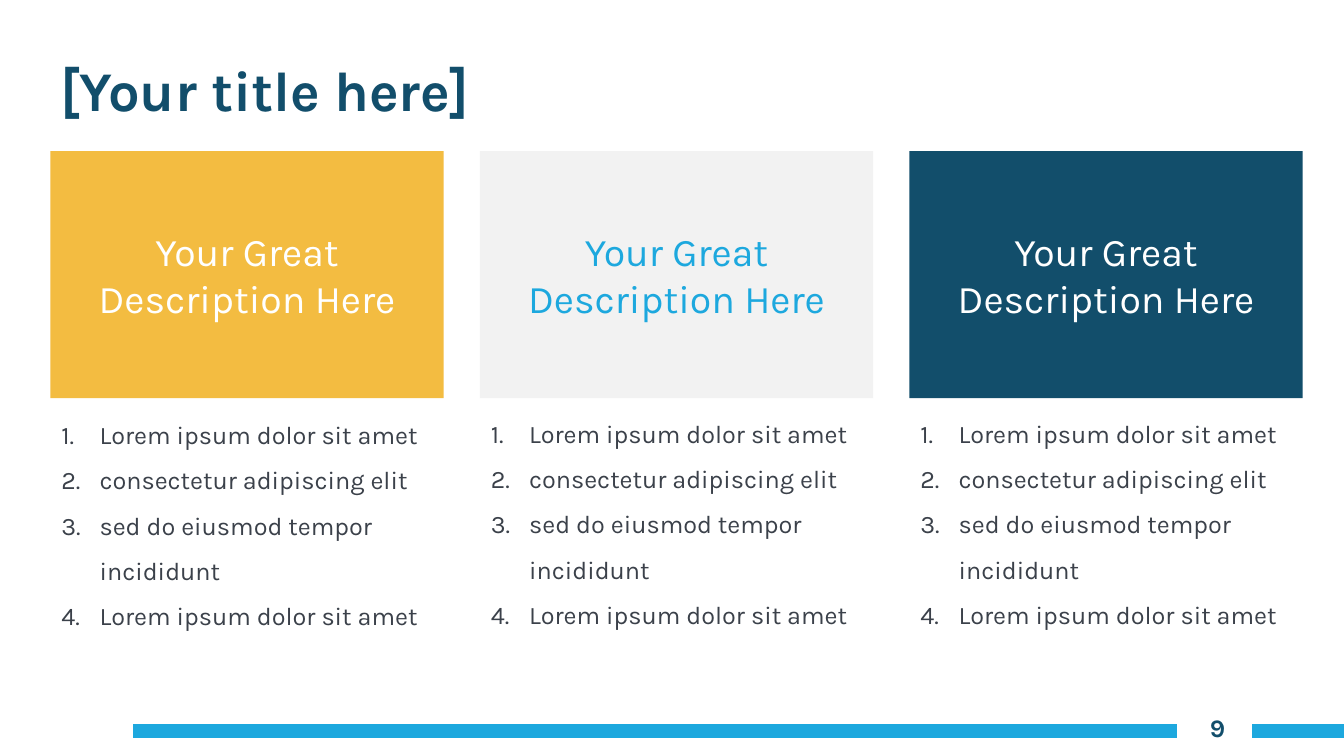
from dataclasses import dataclass

from lxml.etree import SubElement
from pptx import Presentation
from pptx.dml.color import RGBColor
from pptx.enum.shapes import MSO_CONNECTOR as Connector, MSO_SHAPE as Preset
from pptx.enum.text import MSO_ANCHOR as Anchor, MSO_AUTO_SIZE as AutoSize, PP_ALIGN as Align
from pptx.oxml.ns import qn
from pptx.slide import Slide
from pptx.text.text import TextFrame
from pptx.util import Inches, Pt

NAVY = RGBColor(0x12, 0x4E, 0x6B)
SKY = RGBColor(0x1D, 0xA8, 0xDE)
AMBER = RGBColor(0xF3, 0xBC, 0x41)
PALE = RGBColor(0xF2, 0xF2, 0xF2)
WHITE = RGBColor(0xFF, 0xFF, 0xFF)
SLATE = RGBColor(0x3B, 0x41, 0x4A)

FONT = "Karla"
PAGE_WIDTH, PAGE_HEIGHT = 13.33, 7.5
MARGIN = 0.5
COLUMN_WIDTH, COLUMN_STEP = 3.9, 4.26
CARD_TOP, CARD_HEIGHT = 1.5, 2.45
LIST_TOP, LIST_SHIFT, LIST_INDENT = 3.96, 0.01, 0.38
FOOTER_Y = 7.25

CARD_TEXT = "Your Great Description Here"
LIST_ITEMS = (
    "Lorem ipsum dolor sit amet",
    "consectetur adipiscing elit",
    "sed do eiusmod tempor incididunt",
    "Lorem ipsum dolor sit amet",
)


@dataclass(frozen=True)
class Column:
    fill: RGBColor
    ink: RGBColor
    list_height: float
    list_anchor: Anchor


COLUMNS = (
    Column(AMBER, WHITE, 2.77, Anchor.TOP),
    Column(PALE, SKY, 2.32, Anchor.MIDDLE),
    Column(NAVY, WHITE, 2.32, Anchor.MIDDLE),
)
FOOTER_BARS = ((1.32, 11.67), (12.42, PAGE_WIDTH))


def style_text(frame: TextFrame, size: float, color: RGBColor,
               bold: bool = False, align: Align = Align.LEFT) -> None:
    for para in frame.paragraphs:
        para.alignment = align
        for span in para.runs:
            span.font.name = FONT
            span.font.size = Pt(size)
            span.font.bold = bold
            span.font.color.rgb = color


def add_text(page: Slide, text: str, left: float, top: float,
             width: float, height: float) -> TextFrame:
    box = page.shapes.add_textbox(Inches(left), Inches(top), Inches(width), Inches(height))
    frame = box.text_frame
    frame.word_wrap = True
    frame.auto_size = AutoSize.SHAPE_TO_FIT_TEXT
    frame.text = text
    return frame


def number_paragraphs(frame: TextFrame) -> None:
    """Give every paragraph an automatic number with a hanging indent."""
    for para in frame.paragraphs:
        para.line_spacing = 1.5
        properties = para._p.get_or_add_pPr()
        properties.set("marL", str(Inches(LIST_INDENT)))
        properties.set("indent", str(-Inches(LIST_INDENT)))
        SubElement(properties, qn("a:buFont"), typeface="+mj-lt")
        SubElement(properties, qn("a:buAutoNum"), type="arabicPeriod")


def add_card(page: Slide, column: Column, left: float) -> None:
    card = page.shapes.add_shape(Preset.RECTANGLE, Inches(left), Inches(CARD_TOP),
                                 Inches(COLUMN_WIDTH), Inches(CARD_HEIGHT))
    card.shadow.inherit = False
    card.fill.solid()
    card.fill.fore_color.rgb = column.fill
    card.line.fill.background()
    frame = card.text_frame
    frame.word_wrap = True
    frame.vertical_anchor = Anchor.MIDDLE
    frame.text = CARD_TEXT
    style_text(frame, 28, column.ink, align=Align.CENTER)


def add_list(page: Slide, column: Column, left: float) -> None:
    frame = add_text(page, "\n".join(LIST_ITEMS), left + LIST_SHIFT, LIST_TOP,
                     COLUMN_WIDTH, column.list_height)
    frame.vertical_anchor = column.list_anchor
    number_paragraphs(frame)
    style_text(frame, 18, SLATE)


def add_footer_bar(page: Slide, start: float, end: float) -> None:
    bar = page.shapes.add_connector(Connector.STRAIGHT, Inches(start), Inches(FOOTER_Y),
                                    Inches(end), Inches(FOOTER_Y))
    bar.line.color.rgb = SKY
    bar.line.width = Pt(10)
    SubElement(bar._element.spPr, qn("a:effectLst"))


def main() -> None:
    deck = Presentation()
    deck.slide_width, deck.slide_height = Inches(PAGE_WIDTH), Inches(PAGE_HEIGHT)
    page = deck.slides.add_slide(deck.slide_layouts[6])

    for start, end in FOOTER_BARS:
        add_footer_bar(page, start, end)
    page_number = add_text(page, "9", 11.73, 7.02, 0.69, 0.4)
    style_text(page_number, 18, NAVY, bold=True, align=Align.CENTER)

    title = add_text(page, "[Your title here]", MARGIN, 0.5, 5.6, 0.77)
    style_text(title, 40, NAVY, bold=True)

    for index, column in enumerate(COLUMNS):
        left = MARGIN + index * COLUMN_STEP
        add_card(page, column, left)
        add_list(page, column, left)

    deck.save("out.pptx")


if __name__ == "__main__":
    main()
